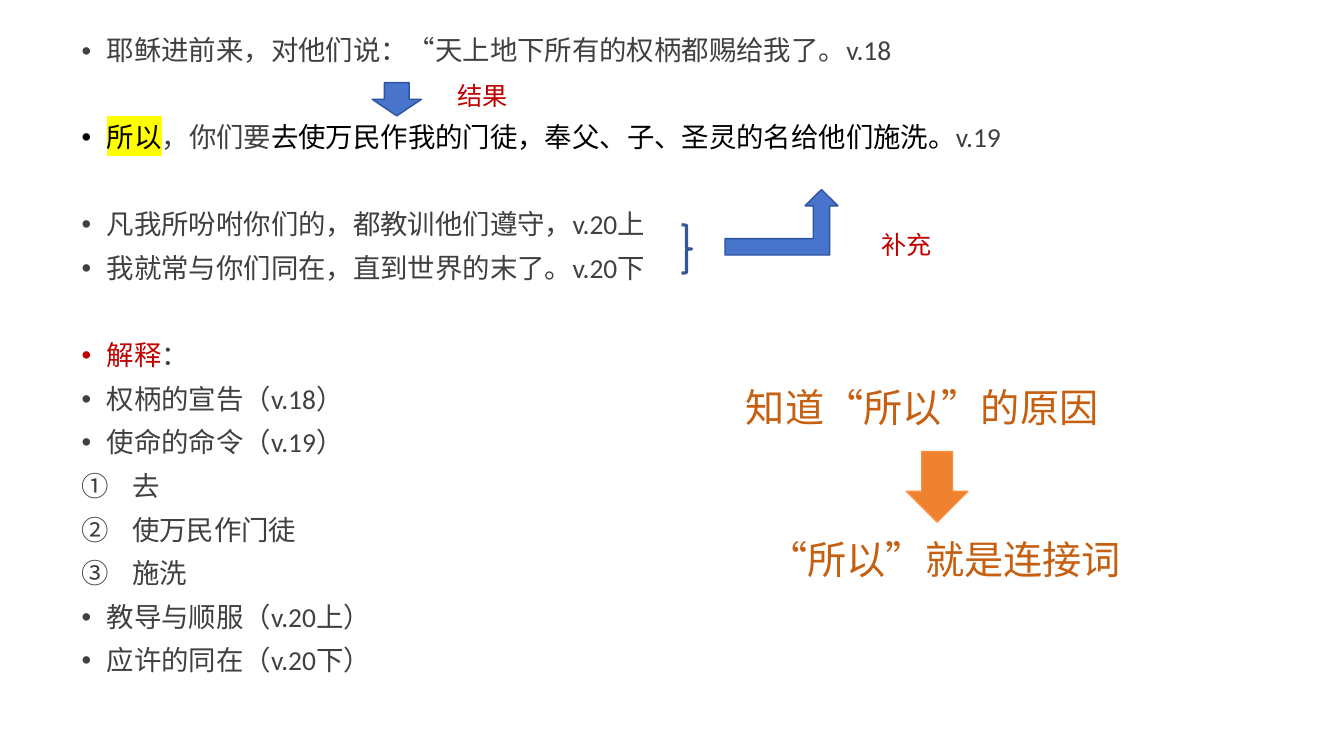
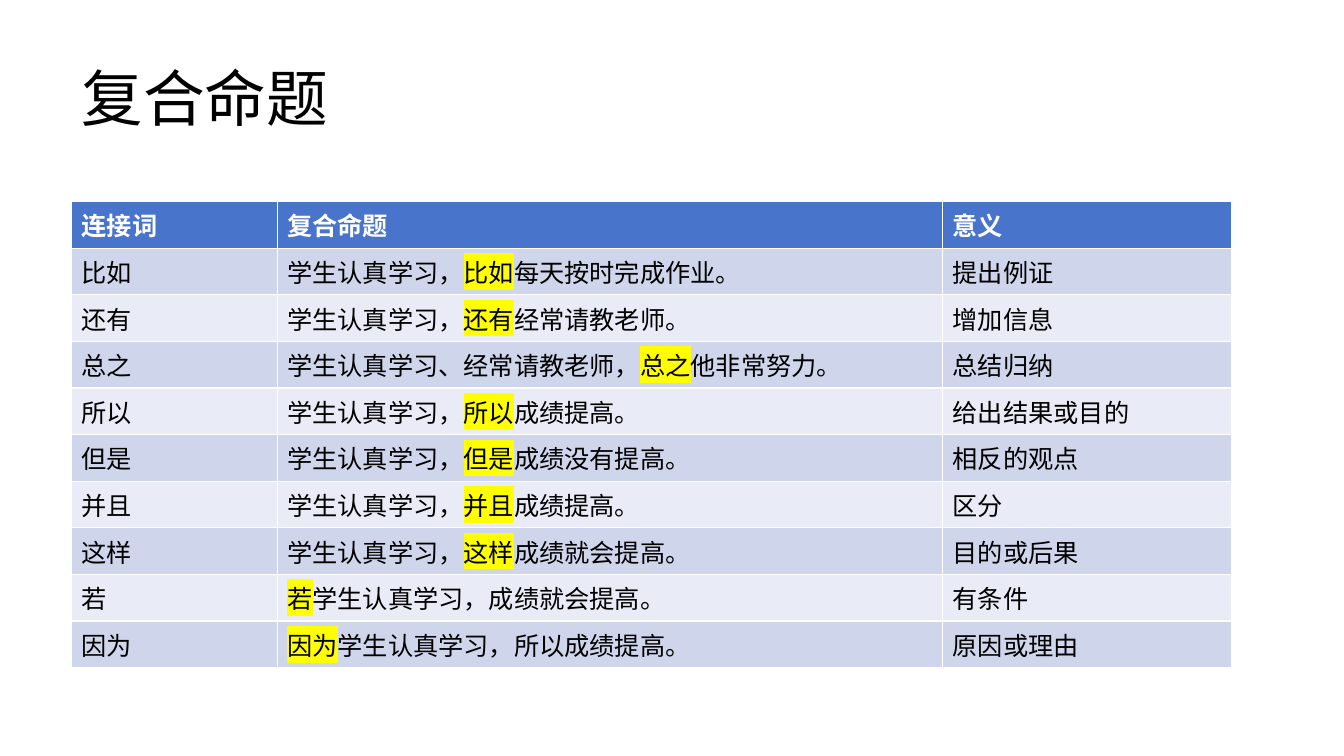
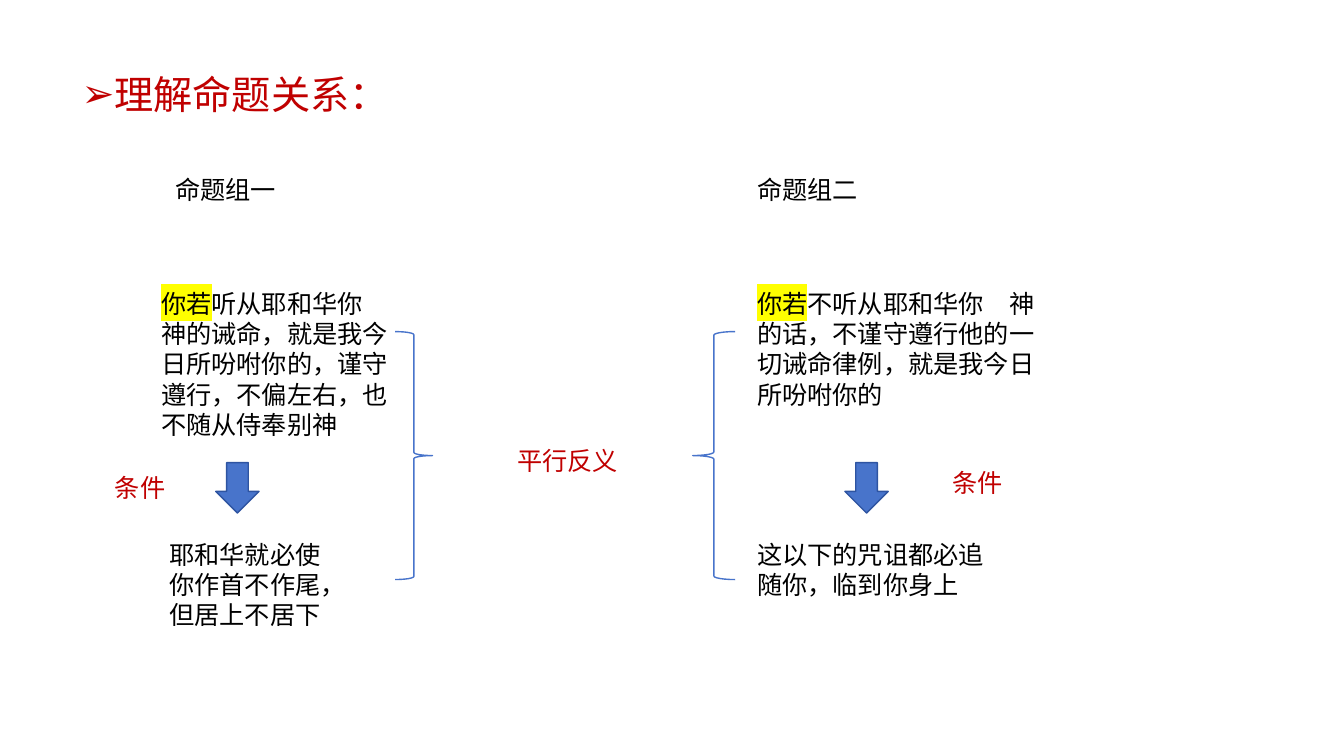
from lxml import etree
from pptx import Presentation
from pptx import util as u
from pptx.dml.color import RGBColor
from pptx.enum import lang, shapes, text
from pptx.oxml import ns

BLACK = RGBColor(0x00, 0x00, 0x00)
WHITE = RGBColor(0xFF, 0xFF, 0xFF)
GREY = RGBColor(0x40, 0x40, 0x40)
RED = RGBColor(0xC0, 0x00, 0x00)
BROWN = RGBColor(0xC6, 0x5F, 0x10)
BLUE = RGBColor(0x48, 0x74, 0xCB)
BLUE_EDGE = RGBColor(0x2E, 0x54, 0xA1)
BRACE_BLUE = RGBColor(0x35, 0x56, 0x96)
ORANGE = RGBColor(0xEE, 0x82, 0x2F)
ORANGE_EDGE = RGBColor(0xFF, 0x8D, 0x41)
BAND_DARK = RGBColor(0xCF, 0xD6, 0xEC)
BAND_LIGHT = RGBColor(0xE9, 0xEB, 0xF6)
MARKER = "FFFF00"

BASE_FONT = {"name": "Calibri", "language_id": lang.MSO_LANGUAGE_ID.SIMPLIFIED_CHINESE}
BODY_LAYOUT, TITLE_LAYOUT = 1, 5
LEFT = 0.71
BULLET, NUMBER, ARROW = "•", "circleNumDbPlain", "➢"
TIGHT, LOOSE = 10, 41

SHAPE = shapes.MSO_SHAPE
ALIGN = text.PP_ALIGN

VERSES = [
    ([("耶稣进前来，对他们说：“天上地下所有的权柄都赐给我了。v.18", GREY)], BULLET, TIGHT),
    ([("所以", BLACK, True), ("，你们要", GREY),
      ("去使万民作我的门徒，奉父、子、圣灵的名给他们施洗。", BLACK),
      ("v.19", GREY)], BULLET, LOOSE),
    ([("凡我所吩咐你们的，都教训他们遵守，v.20上", GREY)], BULLET, LOOSE),
    ([("我就常与你们同在，直到世界的末了。v.20下", GREY)], BULLET, TIGHT),
    ([("解释", RED), ("：", GREY)], BULLET, LOOSE),
    ([("权柄的宣告（v.18）", GREY)], BULLET, TIGHT),
    ([("使命的命令（v.19）", GREY)], BULLET, TIGHT),
    ([("去", GREY)], NUMBER, TIGHT),
    ([("使万民作门徒", GREY)], NUMBER, TIGHT),
    ([("施洗", GREY)], NUMBER, TIGHT),
    ([("教导与顺服（v.20上）", GREY)], BULLET, TIGHT),
    ([("应许的同在（v.20下）", GREY)], BULLET, TIGHT),
]

HEADINGS = ("连接词", "复合命题", "意义")
PROPOSITIONS = [
    ("比如", "学生认真学习，比如每天按时完成作业。", "提出例证"),
    ("还有", "学生认真学习，还有经常请教老师。", "增加信息"),
    ("总之", "学生认真学习、经常请教老师，总之他非常努力。", "总结归纳"),
    ("所以", "学生认真学习，所以成绩提高。", "给出结果或目的"),
    ("但是", "学生认真学习，但是成绩没有提高。", "相反的观点"),
    ("并且", "学生认真学习，并且成绩提高。", "区分"),
    ("这样", "学生认真学习，这样成绩就会提高。", "目的或后果"),
    ("若", "若学生认真学习，成绩就会提高。", "有条件"),
    ("因为", "因为学生认真学习，所以成绩提高。", "原因或理由"),
]


def apply(target, values):
    for attribute, value in values.items():
        setattr(target, attribute, value)


def place(item, box):
    apply(item, dict(zip(("left", "top", "width", "height"), map(u.Inches, box))))


def write(paragraph, pieces, size, bold=False):
    for words, color, *marked in pieces:
        run = paragraph.add_run()
        run.text = words
        apply(run.font, {**BASE_FONT, "size": u.Pt(size), "bold": bold})
        run.font.color.rgb = color
        if marked:
            fill = run.font._element.find(ns.qn("a:solidFill"))
            highlight = etree.Element(ns.qn("a:highlight"))
            etree.SubElement(highlight, ns.qn("a:srgbClr"), val=MARKER)
            fill.addnext(highlight)


def set_marker(paragraph, marker):
    numbered = marker == NUMBER
    indent = u.Inches(0.5 if numbered else 0.25)
    props = paragraph._p.get_or_add_pPr()
    props.set("marL", str(indent))
    props.set("indent", str(-indent))
    if numbered:
        etree.SubElement(props, ns.qn("a:buAutoNum"), type=marker)
    else:
        etree.SubElement(props, ns.qn("a:buFont"), typeface="Arial")
        etree.SubElement(props, ns.qn("a:buChar"), char=marker)


def add_body_slide(deck, box, items, size):
    slide = deck.slides.add_slide(deck.slide_layouts[BODY_LAYOUT])
    heading = slide.shapes.title._element
    heading.getparent().remove(heading)
    body = slide.placeholders[1]
    place(body, box)
    frame = body.text_frame
    apply(frame, {"auto_size": text.MSO_AUTO_SIZE.NONE, "word_wrap": True,
                  "vertical_anchor": text.MSO_ANCHOR.TOP})
    for index, (pieces, marker, gap) in enumerate(items):
        paragraph = frame.add_paragraph() if index else frame.paragraphs[0]
        apply(paragraph, {"line_spacing": 0.9, "space_before": u.Pt(gap),
                          "alignment": ALIGN.LEFT})
        set_marker(paragraph, marker)
        write(paragraph, pieces, size)
    return slide


def add_label(slide, box, pieces, size=18, align=ALIGN.LEFT):
    label = slide.shapes.add_textbox(*map(u.Inches, box))
    apply(label.text_frame, {"word_wrap": True,
                             "auto_size": text.MSO_AUTO_SIZE.SHAPE_TO_FIT_TEXT})
    paragraph = label.text_frame.paragraphs[0]
    paragraph.alignment = align
    write(paragraph, pieces, size)


def add_sign(slide, preset, box, edge, fill=None, weight=1):
    sign = slide.shapes.add_shape(preset, *map(u.Inches, box))
    sign.shadow.inherit = False
    if fill is None:
        sign.fill.background()
    else:
        sign.fill.solid()
        sign.fill.fore_color.rgb = fill
    sign.line.color.rgb = edge
    sign.line.width = u.Pt(weight)


def build_verses(deck):
    slide = add_body_slide(deck, (LEFT, 0.32, 11.8, 7.01), VERSES, 19.6)
    add_sign(slide, SHAPE.DOWN_ARROW, (3.69, 0.82, 0.49, 0.33), BLUE_EDGE, BLUE)
    add_sign(slide, SHAPE.RIGHT_BRACE, (6.76, 2.23, 0.1, 0.48), BRACE_BLUE, weight=2.25)
    add_sign(slide, SHAPE.BENT_UP_ARROW, (7.19, 1.88, 1.12, 0.65), BLUE_EDGE, BLUE)
    add_label(slide, (8.64, 2.23, 1.01, 0.4), [("补充", RED)])
    add_label(slide, (4.44, 0.75, 0.94, 0.4), [("结果", RED)])
    add_label(slide, (7.3, 3.75, 3.88, 0.57), [("知道“所以”的原因", BROWN)], 28)
    add_label(slide, (7.43, 5.26, 3.88, 0.57), [("“所以”就是连接词", BROWN)], 28, ALIGN.CENTER)
    add_sign(slide, SHAPE.DOWN_ARROW, (8.99, 4.48, 0.61, 0.7), ORANGE_EDGE, ORANGE)


def fill_row(row, contents, color, bold=False):
    for cell, pieces in zip(row.cells, contents):
        cell.fill.solid()
        cell.fill.fore_color.rgb = color
        write(cell.text_frame.paragraphs[0], pieces, 18, bold)


def build_propositions(deck):
    slide = deck.slides.add_slide(deck.slide_layouts[TITLE_LAYOUT])
    title = slide.shapes.title
    place(title, (LEFT, 0.28, 11.5, 1.45))
    apply(title.text_frame, {"vertical_anchor": text.MSO_ANCHOR.MIDDLE,
                             "auto_size": text.MSO_AUTO_SIZE.NONE})
    heading = title.text_frame.paragraphs[0]
    apply(heading, {"alignment": ALIGN.LEFT, "line_spacing": 0.9})
    write(heading, [("复合命题", BLACK)], 44)

    count = len(PROPOSITIONS) + 1
    table = slide.shapes.add_table(
        count, len(HEADINGS), *map(u.Inches, (LEFT, 2, 11.51, 0.42 * count))).table
    for column, width in zip(table.columns, (2.04, 6.6, 2.87)):
        column.width = u.Inches(width)
    header, *rows = table.rows
    fill_row(header, [[(name, WHITE)] for name in HEADINGS], BLUE, True)
    for index, (row, (link, sentence, meaning)) in enumerate(zip(rows, PROPOSITIONS)):
        before, _, after = sentence.partition(link)
        marked = [(link, BLACK, True), (after, BLACK)]
        if before:
            marked.insert(0, (before, BLACK))
        fill_row(row, [[(link, BLACK)], marked, [(meaning, BLACK)]],
                 BAND_LIGHT if index % 2 else BAND_DARK)


def build_relations(deck):
    slide = add_body_slide(deck, (LEFT, 0.7, 11.5, 6.05),
                           [([("理解命题关系：", RED)], ARROW, TIGHT)], 28)
    plain_labels = [
        ((1.64, 1.68, 1.41, 0.4), "命题组一"),
        ((7.41, 1.68, 1.41, 0.4), "命题组二"),
        ((1.58, 5.3, 1.91, 1.01), "耶和华就必使你作首不作尾，但居上不居下"),
        ((7.41, 5.3, 2.65, 0.71), "这以下的咒诅都必追随你，临到你身上"),
    ]
    for box, words in plain_labels:
        add_label(slide, box, [(words, BLACK)])
    conditions = [
        ((1.5, 2.81, 2.65, 1.61),
         "听从耶和华你　神的诫命，就是我今日所吩咐你的，谨守遵行，不偏左右，也不随从侍奉别神"),
        ((7.41, 2.81, 3.15, 1.31),
         "不听从耶和华你　神的话，不谨守遵行他的一切诫命律例，就是我今日所吩咐你的"),
    ]
    for box, words in conditions:
        add_label(slide, box, [("你若", BLACK, True), (words, BLACK)])
    for left in (2.14, 8.38):
        add_sign(slide, SHAPE.DOWN_ARROW, (left, 4.59, 0.43, 0.5), BLUE_EDGE, BLUE)
    for left, top in ((1.04, 4.64), (9.35, 4.59)):
        add_label(slide, (left, top, 0.81, 0.4), [("条件", RED)])
    add_sign(slide, SHAPE.RIGHT_BRACE, (3.92, 3.29, 0.37, 2.46), BLUE)
    add_sign(slide, SHAPE.LEFT_BRACE, (6.87, 3.29, 0.42, 2.46), BLUE)
    add_label(slide, (4.73, 4.37, 1.8, 0.4), [("平行反义", RED)], align=ALIGN.CENTER)


def main():
    deck = Presentation()
    apply(deck, {"slide_width": u.Inches(13.33), "slide_height": u.Inches(7.5)})
    build_verses(deck)
    build_propositions(deck)
    build_relations(deck)
    deck.save("out.pptx")


if __name__ == "__main__":
    main()
